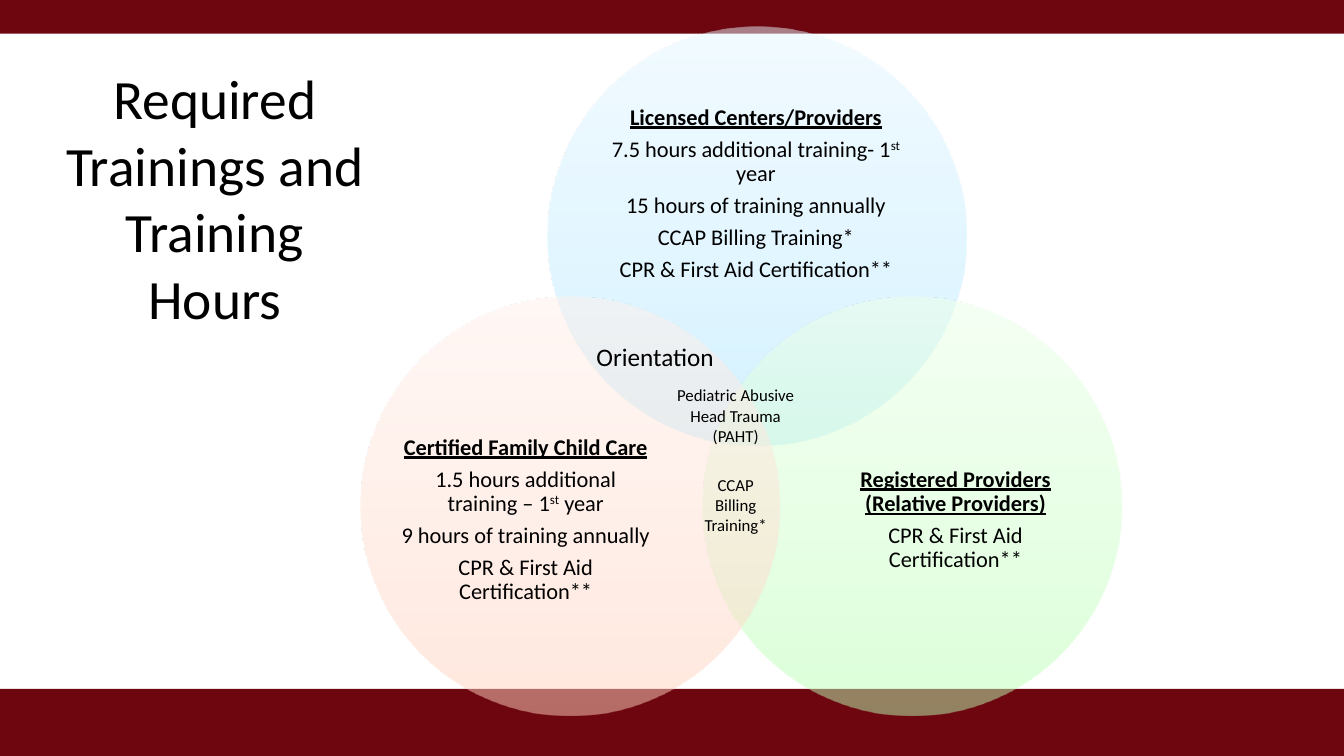
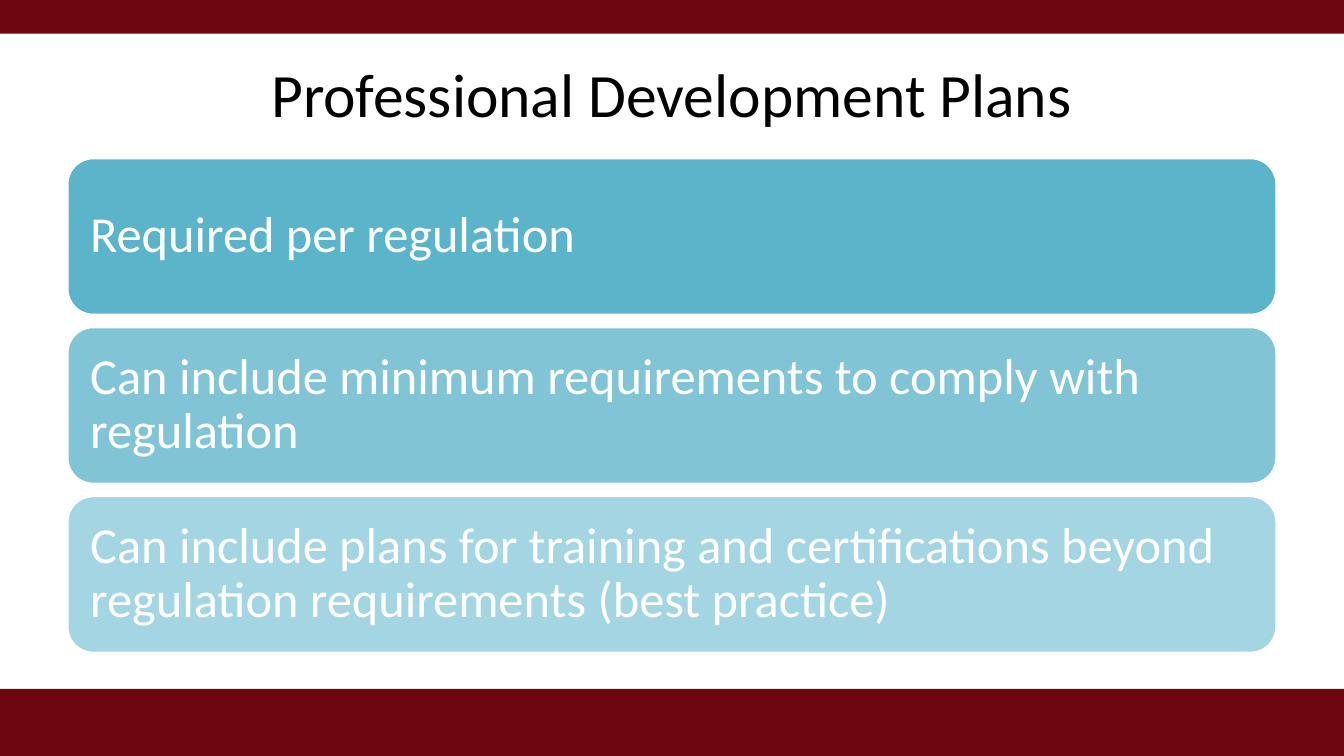
from lxml.etree import SubElement
from pptx import Presentation
from pptx.dml.color import RGBColor
from pptx.enum.shapes import MSO_SHAPE as SHAPE
from pptx.enum.text import MSO_ANCHOR as ANCHOR, PP_ALIGN as ALIGN
from pptx.oxml.ns import qn
from pptx.util import Pt

FONT = "Calibri"
BLACK = RGBColor(0x00, 0x00, 0x00)
WHITE = RGBColor(0xFF, 0xFF, 0xFF)
MAROON = RGBColor(0x6E, 0x06, 0x10)
TEAL = RGBColor(0x4B, 0xAC, 0xC6)
# Gradient colours, from bottom to top
BLUES = [RGBColor.from_string(c) for c in ("A7E6FF", "C1EDFF", "E7F8FF")]
GREENS = [RGBColor.from_string(c) for c in ("B9FFB2", "CDFFC9", "ECFFEA")]
PEACHES = [RGBColor.from_string(c) for c in ("FFD2BD", "FFDED0", "FFF2ED")]
STOPS = (0, 35, 100)

WIDTH, HEIGHT = 960, 540
CIRCLE = 299
SPACING = 0.35  # space after a paragraph, as a share of the text size


def add_box(slide, kind, x, y, w, h):
    sp = slide.shapes.add_shape(kind, Pt(x), Pt(y), Pt(w), Pt(h))
    sp.shadow.inherit = False
    sp.line.fill.background()
    return sp


def add_solid(slide, kind, x, y, w, h, color, alpha=100):
    sp = add_box(slide, kind, x, y, w, h)
    sp.fill.solid()
    sp.fill.fore_color.rgb = color
    if alpha < 100:
        clr = sp.fill._xPr.find(f"{qn('a:solidFill')}/{qn('a:srgbClr')}")
        SubElement(clr, qn("a:alpha"), val=str(alpha * 1000))
    return sp


def add_circle(slide, x, y, colors):
    """Half-transparent circle with a vertical gradient."""
    sp = add_box(slide, SHAPE.OVAL, x, y, CIRCLE, CIRCLE)
    sp.fill.gradient()
    sp.fill.gradient_angle = 90
    stops = sp.fill._xPr.find(f"{qn('a:gradFill')}/{qn('a:gsLst')}")
    for gs in list(stops):
        stops.remove(gs)
    for pos, color in zip(STOPS, colors):
        gs = SubElement(stops, qn("a:gs"), pos=str(pos * 1000))
        clr = SubElement(gs, qn("a:srgbClr"), val=str(color))
        SubElement(clr, qn("a:alpha"), val="50000")


def write(sp, *paragraphs, size, color=BLACK, align=ALIGN.CENTER,
          anchor=ANCHOR.MIDDLE, inset=None, heading=False, listed=False):
    """Fill a shape with text; ^ marks stand around superscript."""
    tf = sp.text_frame
    tf.word_wrap = True
    tf.vertical_anchor = anchor
    if inset is not None:
        tf.margin_left = tf.margin_right = Pt(inset)
        tf.margin_top = tf.margin_bottom = Pt(inset)
    for i, text in enumerate(paragraphs):
        p = tf.add_paragraph() if i else tf.paragraphs[0]
        p.alignment = align
        if listed:
            p.line_spacing = 0.9
            p.space_after = Pt(size * SPACING)
        for j, part in enumerate(text.split("^")):
            r = p.add_run()
            r.text = part
            r.font.name = FONT
            r.font.size = Pt(size)
            r.font.color.rgb = color
            if heading and i == 0:
                r.font.bold = r.font.underline = True
            if j % 2:
                r._r.get_or_add_rPr().set("baseline", "30000")


def add_text(slide, x, y, w, h, *paragraphs, **style):
    sp = slide.shapes.add_textbox(Pt(x), Pt(y), Pt(w), Pt(h))
    write(sp, *paragraphs, **style)


def add_slide(prs):
    """Blank slide with the shared top and bottom bands."""
    slide = prs.slides.add_slide(prs.slide_layouts[6])
    for y, h in ((0, 24), (492, 48)):
        add_solid(slide, SHAPE.RECTANGLE, 0, y, WIDTH, h, MAROON)
    return slide


def add_trainings(prs):
    slide = add_slide(prs)
    add_text(slide, 36, 57, 235, 168, "Required Trainings and Training Hours", size=39.6)

    # Circles of the diagram: place, colours, text area, text
    circles = [
        (391, 19.3, BLUES, (430.5, 71, 219, 135),
         ["Licensed Centers/Providers",
          "7.5 hours additional training- 1^st^ year",
          "15 hours of training annually",
          "CCAP Billing Training*",
          "CPR & First Aid Certification**"]),
        (502, 212, GREENS, (593, 289.5, 179, 164),
         ["Registered Providers (Relative Providers)",
          "CPR & First Aid Certification**"]),
        (257.5, 212, PEACHES, (286, 289.5, 179, 164),
         ["Certified Family Child Care",
          "1.5 hours additional training – 1^st^ year",
          "9 hours of training annually",
          "CPR & First Aid Certification**"]),
    ]
    for x, y, colors, area, lines in circles:
        add_circle(slide, x, y, colors)
        add_text(slide, *area, *lines, size=16, inset=0, heading=True, listed=True)

    # Labels on the overlaps
    add_text(slide, 468.5, 271.5, 114, 51, "Pediatric Abusive Head Trauma (PAHT)",
             size=12, anchor=ANCHOR.TOP)
    add_text(slide, 419, 240, 99.5, 29, "Orientation",
             size=18, align=ALIGN.LEFT, anchor=ANCHOR.TOP)
    add_text(slide, 494, 335.5, 63, 51, "CCAP Billing Training*",
             size=12, anchor=ANCHOR.TOP)


def add_plans(prs):
    slide = add_slide(prs)
    add_text(slide, 48, 21.5, 864, 90, "Professional Development Plans", size=44)

    # Rows that fade from top to bottom
    rows = ["Required per regulation",
            "Can include minimum requirements to comply with regulation",
            "Can include plans for training and certifications beyond "
            "regulation requirements (best practice)"]
    top, height, pitch = 112.8, 112.3, 120.7
    for i, text in enumerate(rows):
        sp = add_solid(slide, SHAPE.ROUNDED_RECTANGLE, 48, top + i * pitch,
                       864, height, TEAL, alpha=90 - 20 * i)
        sp.line.color.rgb = WHITE
        sp.line.width = Pt(2)
        write(sp, text, size=36, color=WHITE, align=ALIGN.LEFT, inset=11, listed=True)


def main():
    prs = Presentation()
    prs.slide_width, prs.slide_height = Pt(WIDTH), Pt(HEIGHT)
    add_trainings(prs)
    add_plans(prs)
    prs.save("out.pptx")


if __name__ == "__main__":
    main()
